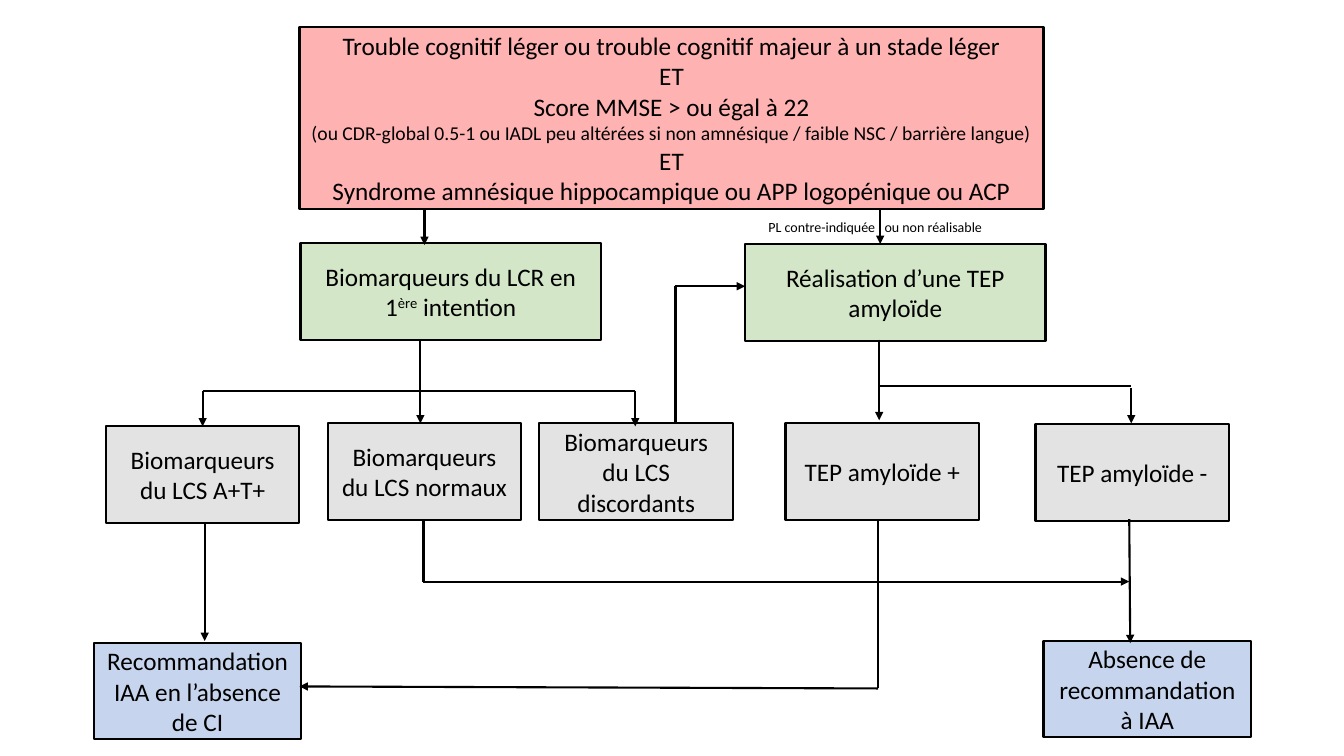
from dataclasses import dataclass

from lxml import etree
from pptx import Presentation
from pptx.dml.color import RGBColor
from pptx.enum.shapes import MSO_CONNECTOR, MSO_SHAPE
from pptx.enum.text import MSO_ANCHOR, PP_ALIGN
from pptx.oxml.ns import qn
from pptx.slide import Slide
from pptx.text.text import TextFrame
from pptx.util import Pt

EMU_PER_PX = 9144  # 100 px to the inch
RECTANGLE = MSO_SHAPE.RECTANGLE
STRAIGHT = MSO_CONNECTOR.STRAIGHT
CENTER = PP_ALIGN.CENTER
MIDDLE = MSO_ANCHOR.MIDDLE


@dataclass(frozen=True)
class Theme:
    font: str = "Calibri"
    ink: str = "000000"
    criteria: str = "FF0000"
    exam: str = "70AD47"
    result: str = "A5A5A5"
    decision: str = "4472C4"
    fill_opacity: int = 30
    line_width: float = 1.5
    body: int = 18
    detail: int = 14
    note: int = 10


THEME = Theme()


@dataclass(frozen=True)
class Span:
    """A piece of text; baseline is in 1/1000 percent, spacing in 1/100 pt."""
    text: str
    size: int | None = None
    baseline: int | None = None
    spacing: int | None = None


Line = list[Span]


@dataclass(frozen=True)
class Box:
    left: int
    top: int
    width: int
    height: int
    color: str
    lines: list[Line]


@dataclass(frozen=True)
class Link:
    x1: int
    y1: int
    x2: int
    y2: int
    arrow: bool = True


def px(length: int) -> int:
    return length * EMU_PER_PX


def rgb(color: str) -> RGBColor:
    return RGBColor.from_string(color)


def result_box(left: int, top: int, text: str) -> Box:
    return Box(left, top, 192, 96, THEME.result, [[Span(text)]])


def exam_box(left: int, top: int, *spans: Span) -> Box:
    return Box(left, top, 298, 96, THEME.exam, [list(spans)])


def decision_box(left: int, top: int, text: str) -> Box:
    return Box(left, top, 206, 95, THEME.decision, [[Span(text)]])


CRITERIA = [
    [Span("Trouble cognitif léger ou trouble cognitif majeur à un stade léger")],
    [Span("ET")],
    [Span("Score MMSE > ou égal à 22\n"),
     Span("(ou CDR-global 0.5-1 ou IADL peu altérées si non amnésique"
          " / faible NSC / barrière langue)", size=THEME.detail)],
    [Span("ET")],
    [Span("Syndrome amnésique hippocampique ou APP logopénique ou ACP")],
]

BOXES = [
    Box(297, 27, 738, 180, THEME.criteria, CRITERIA),
    exam_box(298, 241, Span("Biomarqueurs du LCR en 1"),
             Span("ère", baseline=30000), Span(" intention")),
    exam_box(739, 242, Span("Réalisation d’une TEP amyloïde")),
    result_box(105, 423, "Biomarqueurs du LCS A+T+"),
    result_box(325, 420, "Biomarqueurs du LCS normaux"),
    result_box(535, 420, "Biomarqueurs du LCS discordants"),
    result_box(779, 420, "TEP amyloïde +"),
    result_box(1027, 421, "TEP amyloïde -"),
    decision_box(93, 638, "Recommandation IAA en l’absence de CI"),
    decision_box(1035, 636, "Absence de recommandation à IAA"),
]

# The wide space leaves room for the arrow that crosses the note.
PUNCTURE_NOTE = [Span("PL contre-indiquée"), Span(" ", spacing=450),
                 Span("ou non réalisable")]

LINKS = [
    # Criteria to exams
    Link(421, 208, 421, 243),
    Link(873, 207, 873, 242),
    # CSF biomarkers to their three results
    Link(417, 337, 417, 420),
    Link(201, 388, 630, 388, arrow=False),
    Link(201, 388, 201, 423),
    Link(630, 388, 630, 423),
    # Discordant biomarkers to PET
    Link(670, 284, 670, 420, arrow=False),
    Link(669, 284, 739, 284),
    # PET to its two results
    Link(872, 337, 872, 417),
    Link(872, 383, 1122, 383, arrow=False),
    Link(1122, 385, 1122, 420),
    # Results to decisions
    Link(203, 518, 203, 636),
    Link(420, 516, 420, 577, arrow=False),
    Link(420, 577, 1120, 577),
    Link(871, 683, 871, 515, arrow=False),
    Link(871, 683, 297, 681),
    Link(1120, 515, 1121, 638),
]


def write_lines(frame: TextFrame, lines: list[Line], size: int) -> None:
    frame.word_wrap = True
    for index, line in enumerate(lines):
        paragraph = frame.add_paragraph() if index else frame.paragraphs[0]
        paragraph.alignment = CENTER
        paragraph.font.name = THEME.font
        paragraph.font.size = Pt(size)
        paragraph.font.color.rgb = rgb(THEME.ink)
        for span in line:
            run = paragraph.add_run()
            run.text = span.text.rstrip("\n")
            if span.size:
                run.font.size = Pt(span.size)
            properties = run._r.get_or_add_rPr()
            if span.baseline:
                properties.set("baseline", str(span.baseline))
            if span.spacing:
                properties.set("spc", str(span.spacing))
            if span.text.endswith("\n"):
                paragraph.add_line_break()


def draw_box(slide: Slide, box: Box) -> None:
    shape = slide.shapes.add_shape(RECTANGLE, px(box.left), px(box.top),
                                   px(box.width), px(box.height))
    shape.shadow.inherit = False
    shape.fill.solid()
    shape.fill.fore_color.rgb = rgb(box.color)
    color = shape._element.spPr.find(qn("a:solidFill"))[0]
    etree.SubElement(color, qn("a:alpha"), val=str(THEME.fill_opacity * 1000))
    shape.line.color.rgb = rgb(THEME.ink)
    shape.line.width = Pt(THEME.line_width)
    shape.text_frame.vertical_anchor = MIDDLE
    write_lines(shape.text_frame, box.lines, THEME.body)


def draw_link(slide: Slide, link: Link) -> None:
    connector = slide.shapes.add_connector(STRAIGHT, px(link.x1), px(link.y1),
                                           px(link.x2), px(link.y2))
    connector.line.color.rgb = rgb(THEME.ink)
    connector.line.width = Pt(THEME.line_width)
    if link.arrow:
        etree.SubElement(connector.line._get_or_add_ln(), qn("a:tailEnd"),
                         type="triangle")
    etree.SubElement(connector._element.spPr, qn("a:effectLst"))


def draw_note(slide: Slide, line: Line) -> None:
    note = slide.shapes.add_textbox(px(732), px(212), px(272), px(27))
    write_lines(note.text_frame, [line], THEME.note)


def main() -> None:
    presentation = Presentation()
    presentation.slide_width = px(1333)
    presentation.slide_height = px(750)
    slide = presentation.slides.add_slide(presentation.slide_layouts[6])
    for box in BOXES:
        draw_box(slide, box)
    for link in LINKS:
        draw_link(slide, link)
    draw_note(slide, PUNCTURE_NOTE)
    presentation.save("out.pptx")


if __name__ == "__main__":
    main()
